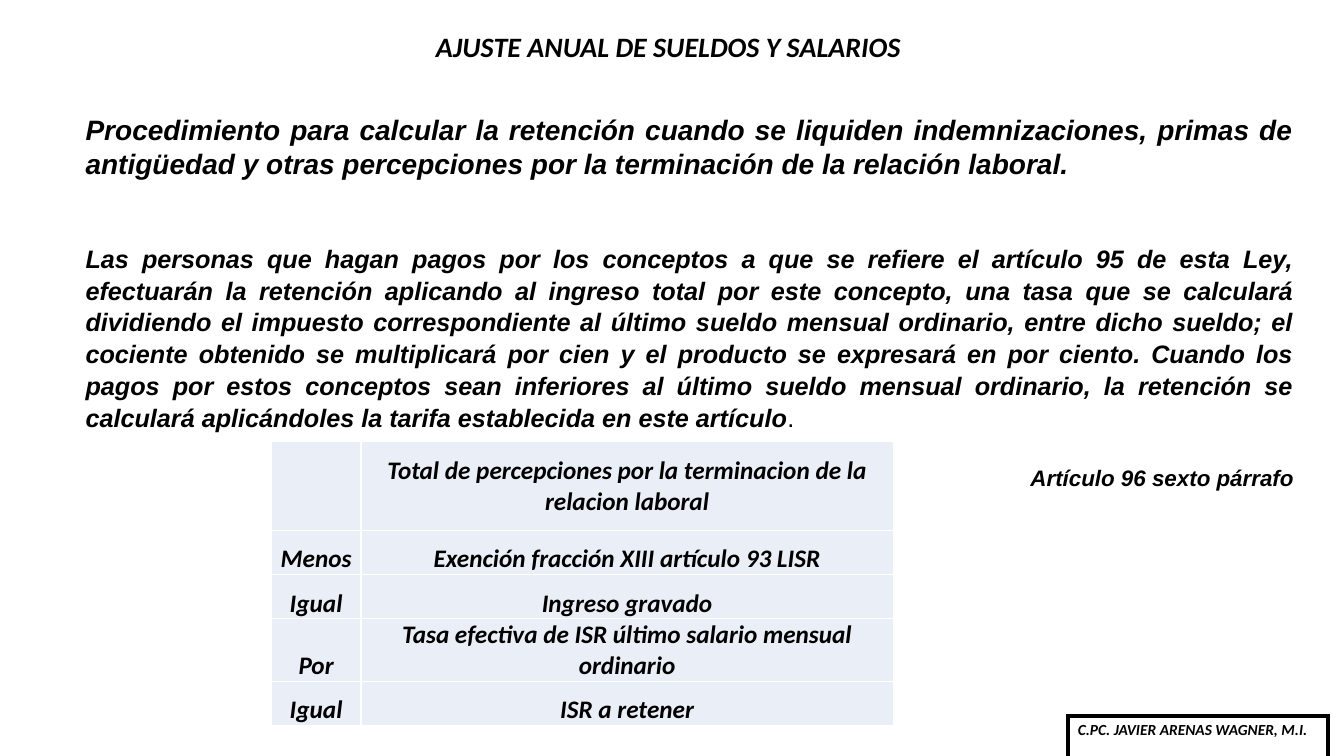
from lxml import etree
from pptx import Presentation
from pptx.dml.color import RGBColor
from pptx.enum.text import MSO_ANCHOR, PP_ALIGN
from pptx.oxml.ns import qn
from pptx.util import Inches, Pt

TOP, MIDDLE, BOTTOM = MSO_ANCHOR.TOP, MSO_ANCHOR.MIDDLE, MSO_ANCHOR.BOTTOM
LEFT, CENTER, RIGHT, JUSTIFY = PP_ALIGN.LEFT, PP_ALIGN.CENTER, PP_ALIGN.RIGHT, PP_ALIGN.JUSTIFY

COLORS = {"text": "000000", "cell": "EAEFF7", "grid": "FFFFFF", "frame": "000000"}

TITLE = "AJUSTE ANUAL DE SUELDOS Y SALARIOS"
HEADING = (
    "Procedimiento para calcular la retención cuando se liquiden indemnizaciones, primas de "
    "antigüedad y otras percepciones por la terminación de la relación laboral."
)
RULE = (
    "Las personas que hagan pagos por los conceptos a que se refiere el artículo 95 de esta Ley, "
    "efectuarán la retención aplicando al ingreso total por este concepto, una tasa que se "
    "calculará dividiendo el impuesto correspondiente al último sueldo mensual ordinario, entre "
    "dicho sueldo; el cociente obtenido se multiplicará por cien y el producto se expresará en "
    "por ciento. Cuando los pagos por estos conceptos sean inferiores al último sueldo mensual "
    "ordinario, la retención se calculará aplicándoles la tarifa establecida en este artículo"
)
CITATION = "Artículo 96 sexto párrafo"
AUTHOR = "C.PC. JAVIER ARENAS WAGNER, M.I."
CALCULATION = [
    ("", "Total de percepciones por la terminacion de la relacion laboral"),
    ("Menos", "Exención fracción XIII artículo 93 LISR"),
    ("Igual", "Ingreso gravado"),
    ("Por", "Tasa efectiva de ISR último salario mensual ordinario"),
    ("Igual", "ISR a retener"),
]


class SlideBuilder:
    def __init__(self, slide):
        self.slide = slide

    def format_paragraph(self, paragraph, size, font, align):
        paragraph.alignment = align
        paragraph.font.size = Pt(size)
        for run in paragraph.runs:
            run.font.name = font
            run.font.size = Pt(size)
            run.font.bold = run.font.italic = True
            run.font.color.rgb = RGBColor.from_string(COLORS["text"])

    def text_box(self, left, top, width, height, paragraphs, font, anchor=TOP):
        """Each paragraph is (text, size, alignment, space before, line spacing)."""
        box = self.slide.shapes.add_textbox(
            Inches(left), Inches(top), Inches(width), Inches(height))
        frame = box.text_frame
        frame.word_wrap = True
        frame.vertical_anchor = anchor
        for index, (text, size, align, space, spacing) in enumerate(paragraphs):
            paragraph = frame.add_paragraph() if index else frame.paragraphs[0]
            paragraph.text = text
            paragraph.space_before = Pt(space)
            paragraph.line_spacing = spacing
            self.format_paragraph(paragraph, size, font, align)
        return frame

    def border(self, cell, color, width):
        properties = cell._tc.get_or_add_tcPr()
        for index, side in enumerate(("a:lnL", "a:lnR", "a:lnT", "a:lnB")):
            line = etree.Element(qn(side), w=str(Pt(width)))
            fill = etree.SubElement(line, qn("a:solidFill"))
            etree.SubElement(fill, qn("a:srgbClr"), val=COLORS[color])
            properties.insert(index, line)

    def table(self, left, top, widths, heights, rows, size, align, border, fill=None, inset=None):
        """Border is (color name, width); without a fill the cells are clear."""
        table = self.slide.shapes.add_table(
            len(rows), len(widths), Inches(left), Inches(top),
            Inches(sum(widths)), Inches(sum(heights))).table
        table.first_row = table.horz_banding = False
        for column, width in zip(table.columns, widths):
            column.width = Inches(width)
        for row, height, texts in zip(table.rows, heights, rows):
            row.height = Inches(height)
            for cell, text in zip(row.cells, texts):
                cell.text_frame.text = text
                self.format_paragraph(cell.text_frame.paragraphs[0], size, "Calibri", align)
                if fill:
                    cell.fill.solid()
                    cell.fill.fore_color.rgb = RGBColor.from_string(COLORS[fill])
                else:
                    cell.fill.background()
                if inset is not None:
                    cell.margin_left = cell.margin_right = cell.margin_top = Inches(inset)
                    cell.margin_bottom = 0
                self.border(cell, *border)
        return table


def main():
    presentation = Presentation()
    presentation.slide_width = Inches(13.33)
    presentation.slide_height = Inches(7.5)
    builder = SlideBuilder(presentation.slides.add_slide(presentation.slide_layouts[6]))

    builder.text_box(1.88, 0.23, 9.5, 0.45, [(TITLE, 20, CENTER, 0, 0.9)], "Calibri", BOTTOM)
    builder.table(10.59, 7.1, [2.58], [0.42], [(AUTHOR,)], 11, LEFT, ("frame", 3))

    body = builder.text_box(0.75, 1.07, 12.18, 6.23, [
        (HEADING, 20, JUSTIFY, 0, 1.0),
        (RULE, 18, JUSTIFY, 44, 1.05),
        (CITATION, 16, RIGHT, 23, 1.0),
    ], "Arial")
    period = body.paragraphs[1].add_run()
    period.text = "."
    period.font.name = "Arial"
    period.font.size = Pt(18)
    period.font.color.rgb = RGBColor.from_string(COLORS["text"])

    calculation = builder.table(
        2.69, 4.38, [0.89, 5.28], [0.88, 0.44, 0.44, 0.62, 0.44],
        CALCULATION, 18, CENTER, ("grid", 1), "cell", 0.01)
    for index in range(len(CALCULATION)):
        for cell in calculation.rows[index].cells:
            cell.vertical_anchor = BOTTOM if index else MIDDLE

    presentation.save("out.pptx")


if __name__ == "__main__":
    main()
